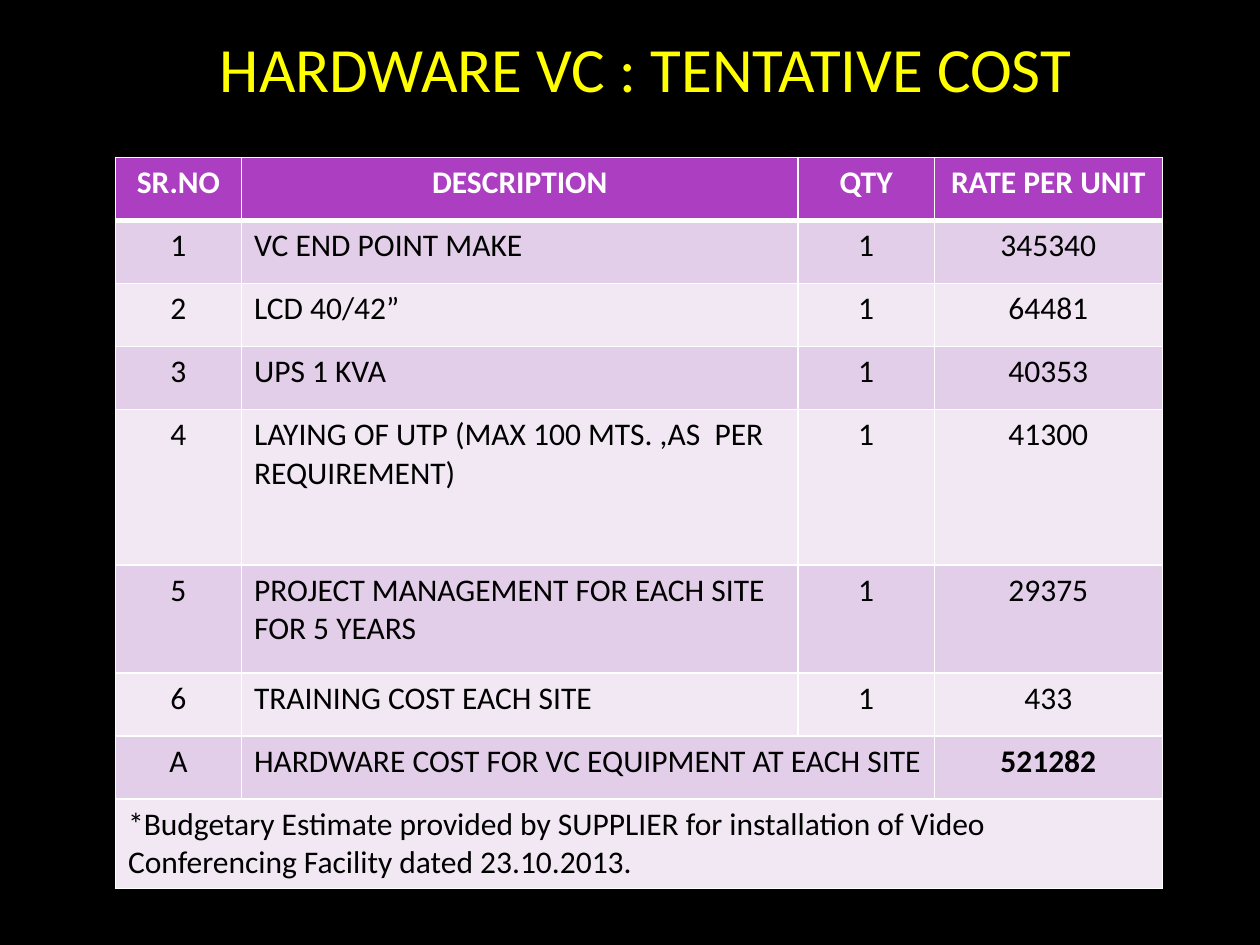
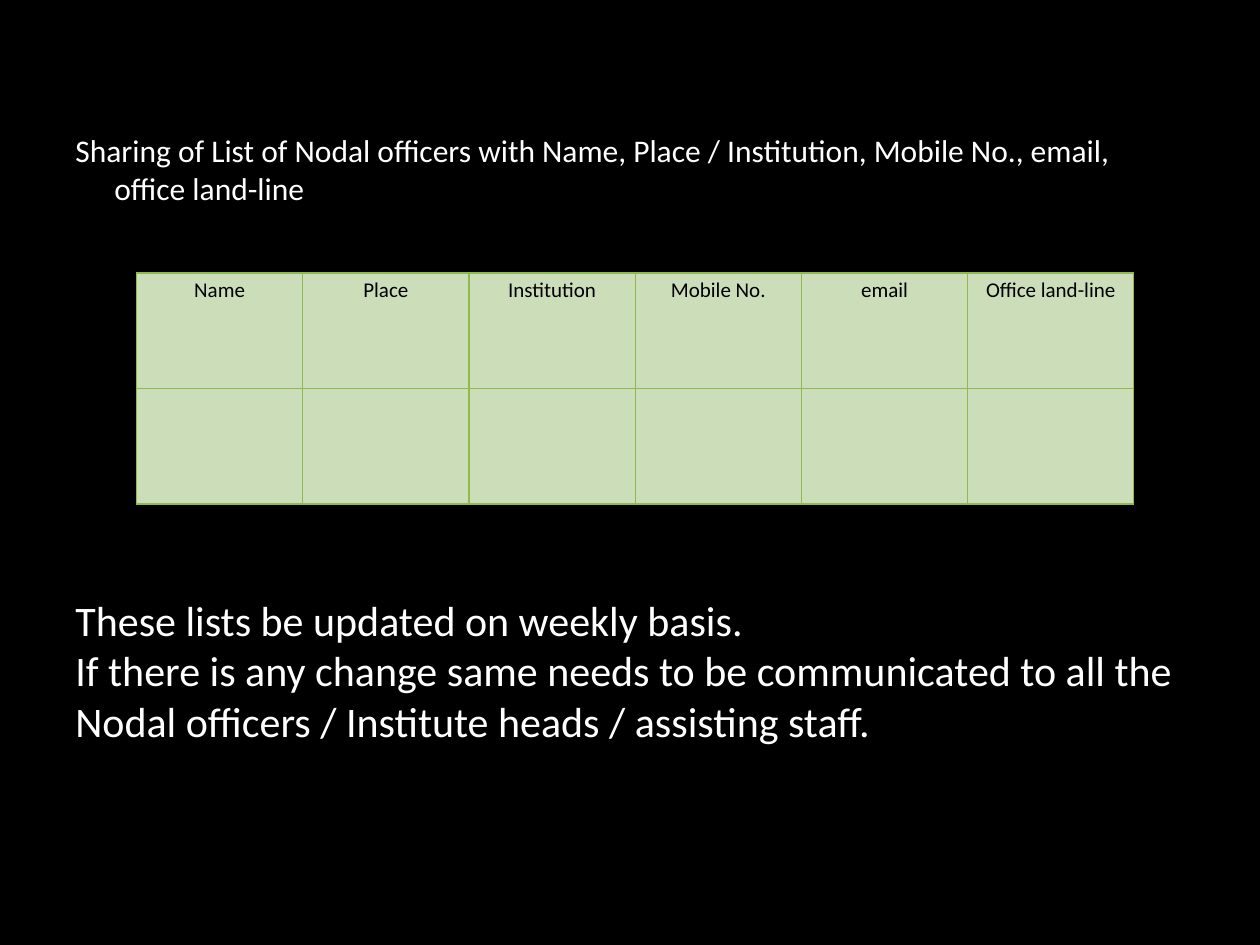
from lxml.etree import SubElement
from pptx import Presentation
from pptx.dml.color import RGBColor
from pptx.enum.text import MSO_ANCHOR, PP_ALIGN
from pptx.oxml.ns import qn
from pptx.util import Inches, Pt

BLACK = RGBColor(0, 0, 0)
WHITE = RGBColor(255, 255, 255)
YELLOW = RGBColor(255, 255, 0)
PURPLE = RGBColor(0xAC, 0x3E, 0xC1)
LILAC = RGBColor(0xE3, 0xCE, 0xE9)
PALE_LILAC = RGBColor(0xF1, 0xE8, 0xF4)
GREEN = RGBColor(0x90, 0xBA, 0x4C)
PALE_GREEN = RGBColor(0xCC, 0xDD, 0xBA)
FONT = "Calibri"
COLUMNS, ROWS = 120, 90
SLIDE_W, SLIDE_H = Inches(10), Inches(7.5)

COST_ROWS = [
    ("SR.NO", "DESCRIPTION", "QTY", "RATE PER UNIT"),
    ("1", "VC END POINT MAKE", "1", "345340"),
    ("2", "LCD 40/42”", "1", "64481"),
    ("3", "UPS 1 KVA", "1", "40353"),
    ("4", "LAYING OF UTP (MAX 100 MTS. ,AS  PER REQUIREMENT)", "1", "41300"),
    ("5", "PROJECT MANAGEMENT FOR EACH SITE FOR 5 YEARS", "1", "29375"),
    ("6", "TRAINING COST EACH SITE", "1", "433"),
    ("A", "HARDWARE COST FOR VC EQUIPMENT AT EACH SITE", "", "521282"),
    ("*Budgetary Estimate provided by SUPPLIER for installation of Video "
     "Conferencing Facility dated 23.10.2013.", "", "", ""),
]
OFFICER_FIELDS = ("Name", "Place", "Institution", "Mobile No.", "email", "Office land-line")


def across(n):
    return round(SLIDE_W * n / COLUMNS)


def down(n):
    return round(SLIDE_H * n / ROWS)


def add_slide(prs):
    s = prs.slides.add_slide(prs.slide_layouts[6])
    s.background.fill.solid()
    s.background.fill.fore_color.rgb = BLACK
    return s


def style(p, size, color, align=PP_ALIGN.LEFT, bold=False):
    p.alignment = align
    p.font.name = FONT
    p.font.size = Pt(size)
    p.font.color.rgb = color
    p.font.bold = bold


def add_text(s, left, top, width, height, lines, size, color,
             align=PP_ALIGN.LEFT, anchor=MSO_ANCHOR.TOP):
    sp = s.shapes.add_textbox(across(left), down(top), across(width), down(height))
    tf = sp.text_frame
    tf.word_wrap = True
    tf.vertical_anchor = anchor
    tf.text = "\n".join(lines)
    for p in tf.paragraphs:
        style(p, size, color, align)
    return tf


def add_grid(s, left, top, widths, heights):
    frame = s.shapes.add_table(len(heights), len(widths), across(left), down(top),
                               across(sum(widths)), down(sum(heights)))
    table = frame.table
    for column, width in zip(table.columns, widths):
        column.width = across(width)
    for row, height in zip(table.rows, heights):
        row.height = down(height)
    return table


def paint_cell(cell, fill, line, left=1, right=1, top=1, bottom=1):
    tc_pr = cell._tc.get_or_add_tcPr()
    for side, width in zip("LRTB", (left, right, top, bottom)):
        ln = SubElement(tc_pr, qn(f"a:ln{side}"), w=str(Pt(width)))
        SubElement(SubElement(ln, qn("a:solidFill")), qn("a:srgbClr"), val=str(line))
    cell.fill.solid()
    cell.fill.fore_color.rgb = fill


def add_cost_table(s):
    table = add_grid(s, 11, 15, (12, 53, 13, 21.7), (6, 6, 6, 6, 14.8, 10.3, 6, 6, 8.5))
    total, note = len(COST_ROWS) - 2, len(COST_ROWS) - 1
    for r, values in enumerate(COST_ROWS):
        header = r == 0
        fill = PURPLE if header else LILAC if r % 2 else PALE_LILAC
        for c, value in enumerate(values):
            cell = table.cell(r, c)
            paint_cell(cell, fill, WHITE, top=3 if r == 1 else 1, bottom=3 if header else 1)
            cell.text = value
            left_aligned = r == note or (c == 1 and not header)
            style(cell.text_frame.paragraphs[0], 18, WHITE if header else BLACK,
                  PP_ALIGN.LEFT if left_aligned else PP_ALIGN.CENTER,
                  header or (r, c) == (total, 3))
    table.cell(total, 1).merge(table.cell(total, 2))
    table.cell(note, 0).merge(table.cell(note, 3))


def add_officer_table(s):
    count = len(OFFICER_FIELDS)
    table = add_grid(s, 13, 26, [95 / count] * count, (11, 11))
    for cell in table.iter_cells():
        paint_cell(cell, PALE_GREEN, GREEN, 0.75, 0.75, 0.75, 0.75)
    for c, field in enumerate(OFFICER_FIELDS):
        cell = table.cell(0, c)
        cell.margin_left = cell.margin_right = Inches(0.04)
        cell.margin_top = cell.margin_bottom = Inches(0.04)
        cell.text = field
        p = cell.text_frame.paragraphs[0]
        style(p, 12, BLACK, PP_ALIGN.CENTER)
        p.space_after = Pt(8.7)


def add_hanging_intro(s):
    tf = add_text(s, 6, 6, 108, 25,
                  ["Sharing of List of Nodal officers with Name, Place / Institution, "
                   "Mobile No., email, office land-line"],
                  18, WHITE, anchor=MSO_ANCHOR.MIDDLE)
    tf.margin_bottom = Inches(0.45)
    p_pr = tf.paragraphs[0]._p.get_or_add_pPr()
    p_pr.set("marL", str(Inches(0.31)))
    p_pr.set("indent", str(-Inches(0.31)))


def main():
    prs = Presentation()
    prs.slide_width, prs.slide_height = SLIDE_W, SLIDE_H

    s = add_slide(prs)
    add_text(s, 7, -3.1, 109, 19, ["HARDWARE VC : TENTATIVE COST"], 36, YELLOW,
             PP_ALIGN.CENTER, MSO_ANCHOR.MIDDLE)
    add_cost_table(s)

    s = add_slide(prs)
    add_hanging_intro(s)
    add_officer_table(s)
    add_text(s, 6, 56, 107, 15.7,
             ["These lists be updated on weekly basis.",
              "If there is any change same needs to be communicated to all the "
              "Nodal officers / Institute heads / assisting staff."],
             24, WHITE)

    prs.save("out.pptx")


if __name__ == "__main__":
    main()
